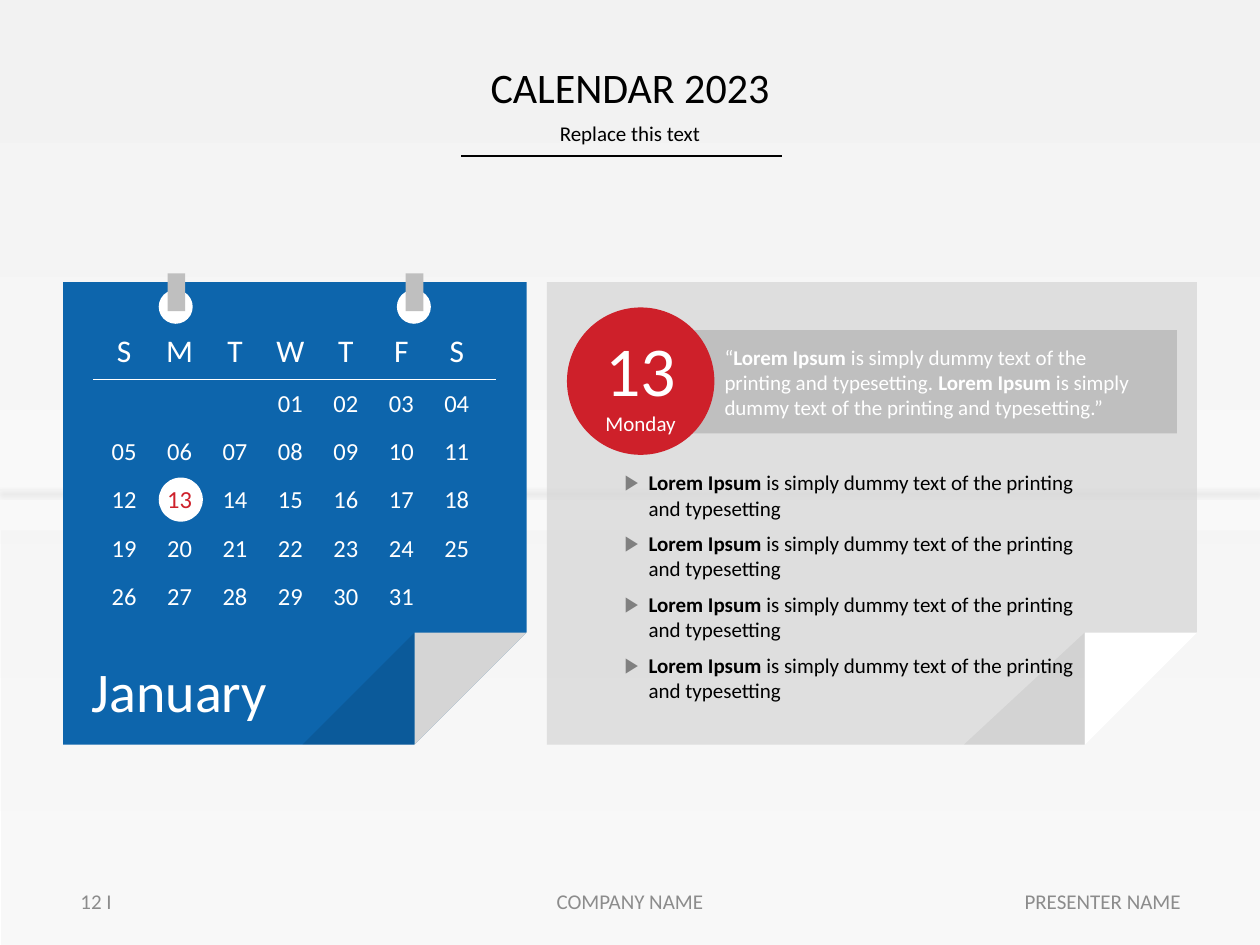
from lxml import etree
from pptx import Presentation
from pptx.dml.color import RGBColor
from pptx.enum.shapes import MSO_CONNECTOR, MSO_SHAPE
from pptx.enum.text import MSO_ANCHOR, PP_ALIGN
from pptx.oxml.ns import qn
from pptx.util import Inches, Pt

RECT, OVAL = MSO_SHAPE.RECTANGLE, MSO_SHAPE.OVAL
SNIP, TRIANGLE = MSO_SHAPE.SNIP_1_RECTANGLE, MSO_SHAPE.RIGHT_TRIANGLE
STRAIGHT = MSO_CONNECTOR.STRAIGHT
LEFT, CENTER, RIGHT = PP_ALIGN.LEFT, PP_ALIGN.CENTER, PP_ALIGN.RIGHT
TOP, MIDDLE = MSO_ANCHOR.TOP, MSO_ANCHOR.MIDDLE

FONT = "Calibri"
COLORS = {
    "black": "000000", "white": "FFFFFF", "mist": "F2F2F2", "paper": "D5D5D5",
    "silver": "BFBFBF", "bullet": "808080", "footer": "8C8C8C",
    "blue": "0D65AC", "red": "CE202A",
}
INSETS = (0.1, 0.05, 0.1, 0.05)
COLUMN_X, COLUMN_STEP = 0.78, 0.44
WEEK_Y, WEEK_STEP = 3.04, 0.383
FIRST_COLUMN, DAYS, MARKED_DAY = 3, 31, 13


def rgb(name):
    return RGBColor.from_string(COLORS[name])


def sub(parent, tag, **attributes):
    child = etree.SubElement(parent, qn(tag))
    for name, value in attributes.items():
        child.set(name, str(value))
    return child


def add_shape(page, kind, box, color, alpha=100, flip=None, rotation=0):
    """Add a borderless preset shape; flip is flipH or flipV, alpha a percentage."""
    shape = page.shapes.add_shape(kind, *map(Inches, box))
    shape.shadow.inherit = False
    shape.line.fill.background()
    shape.fill.solid()
    shape.fill.fore_color.rgb = rgb(color)
    shape.rotation = rotation
    properties = shape._element.spPr
    if alpha < 100:
        sub(properties.find(".//" + qn("a:srgbClr")), "a:alpha", val=alpha * 1000)
    if flip:
        properties.find(qn("a:xfrm")).set(flip, "1")
    return shape


def add_line(page, start, end, color, width):
    """Add a line and return it with its empty effect list."""
    line = page.shapes.add_connector(STRAIGHT, *map(Inches, start + end))
    line.line.color.rgb = rgb(color)
    line.line.width = Pt(width)
    return line, sub(line._element.spPr, "a:effectLst")


def write(shape, *texts, sizes=(12,), color="black", align=LEFT, anchor=MIDDLE,
          insets=INSETS, after=0, bullet=None):
    """Write one paragraph per text; parts between ** marks are bold."""
    frame = shape.text_frame
    frame.word_wrap = True
    frame.vertical_anchor = anchor
    (frame.margin_left, frame.margin_top,
     frame.margin_right, frame.margin_bottom) = map(Inches, insets)
    for index, text in enumerate(texts):
        para = frame.add_paragraph() if index else frame.paragraphs[0]
        para.alignment = align
        para.space_after = Pt(after)
        if bullet:
            add_bullet(para, bullet)
        for part, content in enumerate(text.split("**")):
            if not content:
                continue
            span = para.add_run()
            span.text = content
            span.font.name = FONT
            span.font.size = Pt(sizes[index % len(sizes)])
            span.font.bold = part % 2 == 1
            span.font.color.rgb = rgb(color)


def add_bullet(para, mark):
    properties = para._p.get_or_add_pPr()
    properties.set("marL", str(Inches(0.19)))
    properties.set("indent", str(-Inches(0.19)))
    sub(sub(properties, "a:buClr"), "a:srgbClr", val=COLORS["bullet"])
    sub(properties, "a:buFont", typeface="Arial")
    sub(properties, "a:buChar", char=mark)


def add_text(page, box, *texts, **style):
    write(page.shapes.add_textbox(*map(Inches, box)), *texts, **style)


def add_background(page):
    backdrop = add_shape(page, RECT, (0, 0, 10, 7.5), "mist")
    backdrop.fill.gradient()
    backdrop.fill.gradient_angle = 270
    for stop, color, position in zip(backdrop.fill.gradient_stops,
                                     ("mist", "white"), (0.01, 1)):
        stop.color.rgb = rgb(color)
        stop.position = position
    add_shape(page, RECT, (0.01, 4.21, 9.99, 3.29), "mist", alpha=49)
    _, effects = add_line(page, (0, 3.89), (10, 3.89), "mist", 1)
    shadow = sub(effects, "a:outerShdw", blurRad=Pt(3.1), dist=Pt(1.6),
                 dir=90 * 60000, algn="t", rotWithShape=0)
    sub(sub(shadow, "a:srgbClr", val=COLORS["black"]), "a:alpha", val=16000)


def add_titles_and_footer(page):
    add_text(page, (0.69, 0.44, 8.62, 0.5), "CALENDAR 2023", sizes=(24,), align=CENTER)
    add_text(page, (0.69, 0.92, 8.62, 0.28), "Replace this text", align=CENTER)
    add_line(page, (3.66, 1.24), (6.21, 1.24), "black", 1)
    for left, width, text, align in (
            (0.54, 2.25, "12 I", LEFT),
            (3.31, 3.38, "COMPANY NAME", CENTER),
            (7.22, 2.25, "PRESENTER NAME", RIGHT)):
        add_text(page, (left, 6.95, width, 0.4), text, color="footer", align=align)


def add_sheet(page, left, width, color, alpha, fold_color, shade_width, shade):
    """Add a sheet whose lower right corner is folded over."""
    top, height, fold = 2.24, 3.67, 0.89
    corner_x, corner_y = left + width - fold, top + height - fold
    sheet = add_shape(page, SNIP, (left, top, width, height), color, alpha, flip="flipV")
    sheet.adjustments[0] = 0.243
    add_shape(page, TRIANGLE, (corner_x - shade_width, corner_y, shade_width, fold),
              "black", shade, flip="flipH")
    add_shape(page, TRIANGLE, (corner_x, corner_y, fold, fold), fold_color, rotation=90)


def add_calendar(page):
    add_sheet(page, 0.5, 3.68, "blue", 100, "paper", 0.89, 10)
    for left in (1.26, 3.15):
        add_shape(page, OVAL, (left, 2.3, 0.27, 0.27), "white")
        add_shape(page, RECT, (left + 0.07, 2.17, 0.14, 0.3), "silver")
    add_shape(page, OVAL, (1.26, 3.79, 0.35, 0.35), "white")

    cell = {"align": CENTER, "insets": (0, 0, 0, 0)}
    for column, letter in enumerate("SMTWTFS"):
        add_text(page, (COLUMN_X + column * COLUMN_STEP, 2.58, 0.41, 0.4), letter,
                 sizes=(18,), color="white", **cell)
    add_line(page, (0.74, 3.01), (3.94, 3.01), "white", 0.5)
    for day in range(1, DAYS + 1):
        week, column = divmod(FIRST_COLUMN + day - 1, 7)
        add_text(page, (COLUMN_X + column * COLUMN_STEP, WEEK_Y + week * WEEK_STEP,
                        0.41, 0.31), f"{day:02d}", sizes=(14,),
                 color="red" if day == MARKED_DAY else "white", **cell)
    add_text(page, (0.63, 5.16, 1.8, 0.64), "January", sizes=(32,), color="white")


def add_day_notes(page):
    add_sheet(page, 4.34, 5.16, "paper", 70, "white", 0.96, 5)
    notes = ["**Lorem Ipsum** is simply dummy text of the printing and typesetting"] * 4
    add_text(page, (4.86, 3.68, 3.9, 1.97), *notes, anchor=TOP, after=6, bullet="▶")
    quote = add_shape(page, RECT, (5.45, 2.62, 3.89, 0.82), "silver")
    write(quote, "“**Lorem Ipsum **is simply dummy text of the printing and typesetting. "
          "**Lorem Ipsum **is simply dummy text of the printing and typesetting.”",
          color="white", insets=(0.3, 0.1, 0.2, 0.1))
    badge = add_shape(page, OVAL, (4.5, 2.44, 1.17, 1.17), "red")
    write(badge, str(MARKED_DAY), "Monday", sizes=(40, 12), color="white",
          align=CENTER, insets=(0, 0, 0, 0))


def main():
    deck = Presentation()
    deck.slide_width, deck.slide_height = Inches(10), Inches(7.5)
    page = deck.slides.add_slide(deck.slide_layouts[6])
    add_background(page)
    add_titles_and_footer(page)
    add_day_notes(page)
    add_calendar(page)
    deck.save("out.pptx")


if __name__ == "__main__":
    main()
